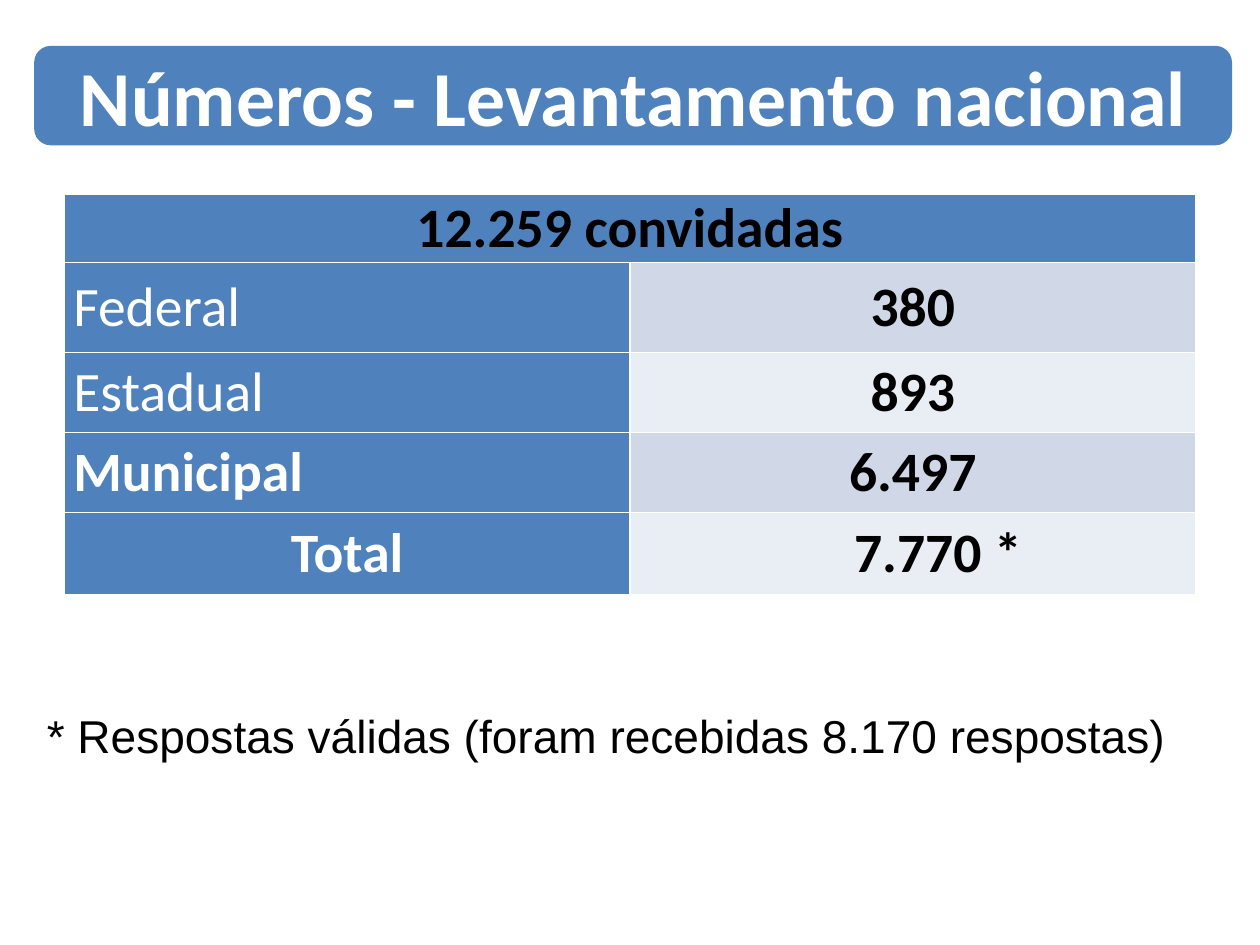
from lxml import etree
from pptx import Presentation
from pptx.dml.color import RGBColor
from pptx.enum import shapes, text
from pptx.oxml import ns
from pptx.util import Cm, Pt

# Content
HEADING = "Números - Levantamento nacional"
INVITED = "12.259 convidadas"
ANSWERS = [  # level, answers, label is bold
    ("Federal", "380", False),
    ("Estadual", "893", False),
    ("Municipal", "6.497", True),
    ("Total", "7.770 *", True),
]
FOOTNOTE = "* Respostas válidas (foram recebidas 8.170 respostas)"

# Look
BLUE, WHITE, BLACK = "4F81BD", "FFFFFF", "000000"
BANDS = ["D0D8E8", "E9EDF4"]
ROW_HEIGHTS = [1.5, 2, 1.78, 1.78, 1.82]
COLUMN_WIDTH = 12.57
TITLE_BOX = [Cm(v) for v in (0.76, 1.02, 26.62, 2.21)]
LEFT, CENTER = text.PP_ALIGN.LEFT, text.PP_ALIGN.CENTER


def paint(color_holder, color):
    color_holder.rgb = RGBColor.from_string(color)


def fill_with(part, color):
    part.fill.solid()
    paint(part.fill.fore_color, color)


def write(frame, words, size, color, bold=False, align=LEFT, face="Calibri"):
    frame.text = words
    paragraph = frame.paragraphs[0]
    paragraph.alignment = align
    font = paragraph.font
    font.name, font.size, font.bold = face, Pt(size), bold
    paint(font.color, color)


def set_box_margins(frame):
    frame.word_wrap = True
    frame.margin_left = frame.margin_right = Cm(0.28)
    frame.margin_top = frame.margin_bottom = Cm(0.15)


def add_borders(cell, color, width):
    properties = cell._tc.get_or_add_tcPr()
    for side in ("lnL", "lnR", "lnT", "lnB"):
        line = etree.SubElement(properties, ns.qn(f"a:{side}"), w=str(Pt(width)))
        solid = etree.SubElement(line, ns.qn("a:solidFill"))
        etree.SubElement(solid, ns.qn("a:srgbClr"), val=color)


def style_cell(cell, words, fill, color, bold, align):
    add_borders(cell, WHITE, 1)
    fill_with(cell, fill)
    cell.margin_left = cell.margin_right = Cm(0.2)
    cell.margin_top = cell.margin_bottom = 0
    cell.vertical_anchor = text.MSO_ANCHOR.MIDDLE
    write(cell.text_frame, words, 35, color, bold, align)


deck = Presentation()
deck.slide_width, deck.slide_height = Cm(28), Cm(21)
slide = deck.slides.add_slide(deck.slide_layouts[5])

# Title on a rounded bar
title = slide.shapes.title
bar = slide.shapes.add_shape(shapes.MSO_SHAPE.ROUNDED_RECTANGLE, *TITLE_BOX)
bar.shadow.inherit = False
fill_with(bar, BLUE)
bar.line.fill.background()
title._element.addprevious(bar._element)
title.left, title.top, title.width, title.height = TITLE_BOX
set_box_margins(title.text_frame)
title.text_frame.auto_size = text.MSO_AUTO_SIZE.NONE
title.text_frame.vertical_anchor = text.MSO_ANCHOR.MIDDLE
write(title.text_frame, HEADING, 49, WHITE, True, CENTER)

# Table of answers by level
table = slide.shapes.add_table(
    len(ROW_HEIGHTS), 2, Cm(1.43), Cm(4.32),
    Cm(2 * COLUMN_WIDTH), Cm(sum(ROW_HEIGHTS))).table
for column in table.columns:
    column.width = Cm(COLUMN_WIDTH)
for row, height in zip(table.rows, ROW_HEIGHTS):
    row.height = Cm(height)

table.cell(0, 0).merge(table.cell(0, 1))
style_cell(table.cell(0, 0), INVITED, BLUE, BLACK, True, CENTER)
for i, (level, answers, bold) in enumerate(ANSWERS, start=1):
    align = CENTER if level == "Total" else LEFT
    style_cell(table.cell(i, 0), level, BLUE, WHITE, bold, align)
    style_cell(table.cell(i, 1), answers, BANDS[(i - 1) % 2], BLACK, True, CENTER)
# The total sits slightly right of the column's centre
table.cell(len(ANSWERS), 1).margin_left = Cm(1.32)

# Footnote
footnote = slide.shapes.add_textbox(Cm(0.76), Cm(15.57), Cm(25.58), Cm(1.5))
set_box_margins(footnote.text_frame)
write(footnote.text_frame, FOOTNOTE, 29, BLACK, face="Arial")

deck.save("out.pptx")
